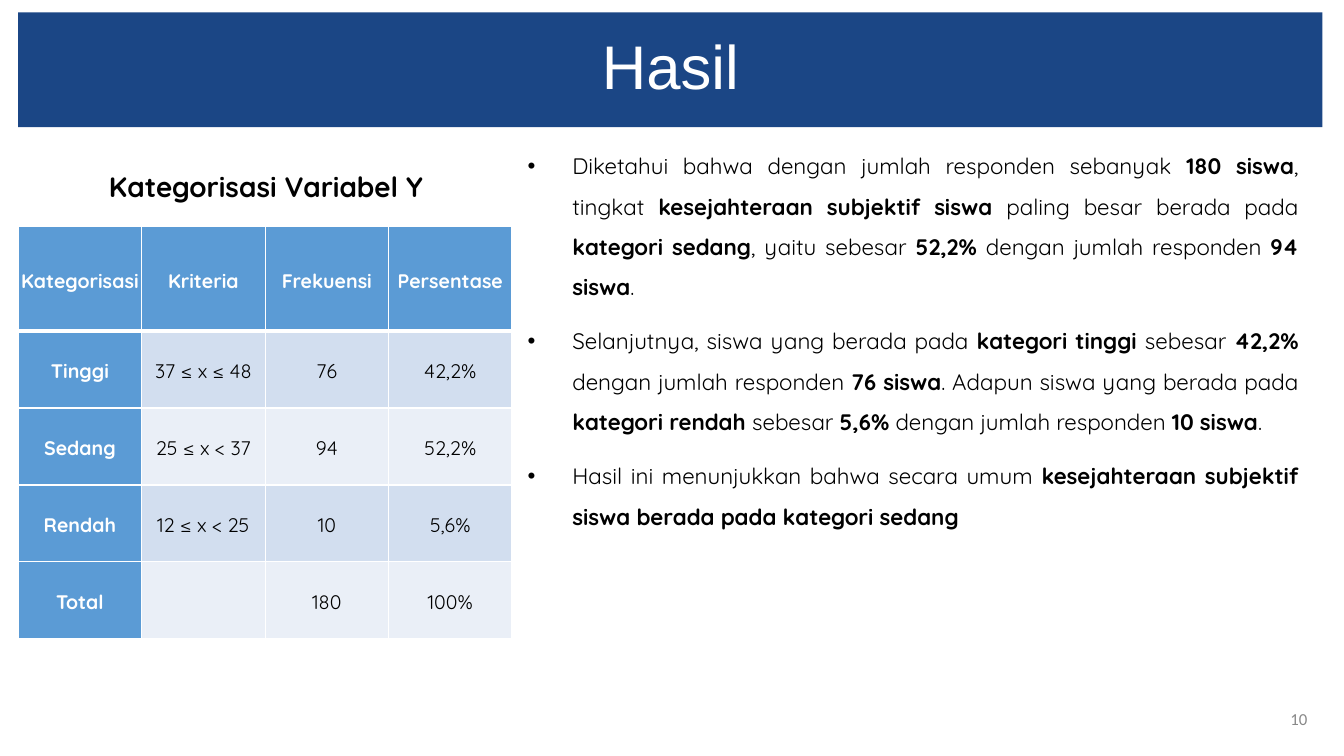
from lxml.etree import SubElement
from pptx import Presentation
from pptx.dml.color import RGBColor
from pptx.enum.shapes import MSO_SHAPE
from pptx.enum.text import MSO_ANCHOR as ANCHOR, PP_ALIGN as ALIGN
from pptx.oxml.ns import qn
from pptx.util import Pt


def rgb(color):
    return RGBColor.from_string(color)


def add_run(p, text, size, color, bold=False, font="Quicksand"):
    r = p.add_run()
    r.text = text
    r.font.name = font
    r.font.size = Pt(size)
    r.font.bold = bold
    r.font.color.rgb = rgb(color)


NAVY, BLUE, WHITE, BLACK, GREY = "1B4685", "5B9BD5", "FFFFFF", "000000", "888888"
BANDS = ["D2DEEF", "EAEFF7"]

prs = Presentation()
prs.slide_width, prs.slide_height = Pt(960), Pt(540)
s = prs.slides.add_slide(prs.slide_layouts[6])

# Slide number
tf = s.shapes.add_textbox(Pt(900), Pt(499), Pt(41), Pt(28.8)).text_frame
tf.word_wrap = True
tf.vertical_anchor = ANCHOR.MIDDLE
p = tf.paragraphs[0]
p.alignment = ALIGN.RIGHT
add_run(p, "10", 12, GREY, font="Calibri")

# Title banner
banner = s.shapes.add_shape(MSO_SHAPE.RECTANGLE, Pt(13), Pt(8.8), Pt(931.7), Pt(82))
banner.shadow.inherit = False
banner.fill.solid()
banner.fill.fore_color.rgb = rgb(NAVY)
banner.line.fill.background()
tf = banner.text_frame
tf.vertical_anchor = ANCHOR.MIDDLE
p = tf.paragraphs[0]
p.alignment = ALIGN.CENTER
p.line_spacing = 0.9
add_run(p, "Hasil", 44, WHITE, font="Arial")

# Category table
rows = [
    ["Kategorisasi", "Kriteria", "Frekuensi", "Persentase"],
    ["Tinggi", "37 ≤ x ≤ 48", "76", "42,2%"],
    ["Sedang", "25 ≤ x < 37", "94", "52,2%"],
    ["Rendah", "12 ≤ x < 25", "10", "5,6%"],
    ["Total", "", "180", "100%"],
]
HEADER_H, ROW_H, COL_W = 74.4, 55, 88.2
table = s.shapes.add_table(
    len(rows), 4, Pt(13), Pt(162), Pt(4 * COL_W), Pt(HEADER_H + 4 * ROW_H)).table
for col in table.columns:
    col.width = Pt(COL_W)
for i, values in enumerate(rows):
    table.rows[i].height = Pt(ROW_H if i else HEADER_H)
    for j, value in enumerate(values):
        cell = table.cell(i, j)
        cell.margin_left = cell.margin_right = Pt(0.7)
        cell.margin_top = cell.margin_bottom = Pt(0.7)
        cell.vertical_anchor = ANCHOR.MIDDLE
        tcPr = cell._tc.get_or_add_tcPr()
        for side in ("L", "R", "T", "B"):
            below_header = (i, side) in ((0, "B"), (1, "T"))
            ln = SubElement(tcPr, qn(f"a:ln{side}"), w=str(Pt(3 if below_header else 1)))
            SubElement(SubElement(ln, qn("a:solidFill")), qn("a:srgbClr"), val=WHITE)
        heading = i == 0 or j == 0
        cell.fill.solid()
        cell.fill.fore_color.rgb = rgb(BLUE if heading else BANDS[(i - 1) % 2])
        if value:
            p = cell.text_frame.paragraphs[0]
            p.alignment = ALIGN.CENTER
            p.line_spacing = 1.15
            p.space_after = Pt(8)
            add_run(p, value, 14, WHITE if heading else BLACK, heading)

# Findings: runs alternate between regular and bold
findings = [
    ["Diketahui bahwa dengan jumlah responden sebanyak ", "180 siswa", ", tingkat ",
     "kesejahteraan subjektif siswa", " paling besar berada pada ", "kategori sedang",
     ", yaitu sebesar ", "52,2% ", "dengan jumlah responden ", "94 siswa", "."],
    ["Selanjutnya, siswa yang berada pada ", "kategori tinggi ", "sebesar ", "42,2% ",
     "dengan jumlah responden ", "76 siswa", ". Adapun siswa yang berada pada ",
     "kategori rendah ", "sebesar ", "5,6% ", "dengan jumlah responden ", "10 siswa", "."],
    ["Hasil ini menunjukkan bahwa secara umum ",
     "kesejahteraan subjektif siswa berada pada kategori sedang"],
]
tf = s.shapes.add_textbox(Pt(365.8), Pt(95.8), Pt(568.8), Pt(350.6)).text_frame
tf.word_wrap = True
for i, runs in enumerate(findings):
    p = tf.add_paragraph() if i else tf.paragraphs[0]
    pPr = p._p.get_or_add_pPr()
    pPr.set("marL", str(Pt(36)))
    pPr.set("indent", str(Pt(-32)))
    SubElement(SubElement(pPr, qn("a:buClr")), qn("a:srgbClr"), val=BLACK)
    SubElement(pPr, qn("a:buFont"), typeface="Arial")
    SubElement(pPr, qn("a:buChar"), char="•")
    p.alignment = ALIGN.JUSTIFY
    p.line_spacing = 1.5
    if i:
        p.space_before = Pt(10)
    for j, text in enumerate(runs):
        add_run(p, text, 16, BLACK, j % 2 == 1)

# Table caption
tf = s.shapes.add_textbox(Pt(-17), Pt(120.2), Pt(414), Pt(25.2)).text_frame
tf.word_wrap = True
tf.margin_left = tf.margin_right = tf.margin_bottom = 0
tf.margin_top = Pt(0.9)
p = tf.paragraphs[0]
p.alignment = ALIGN.CENTER
add_run(p, "Kategorisasi Variabel Y", 20, BLACK, True)

prs.save("out.pptx")
